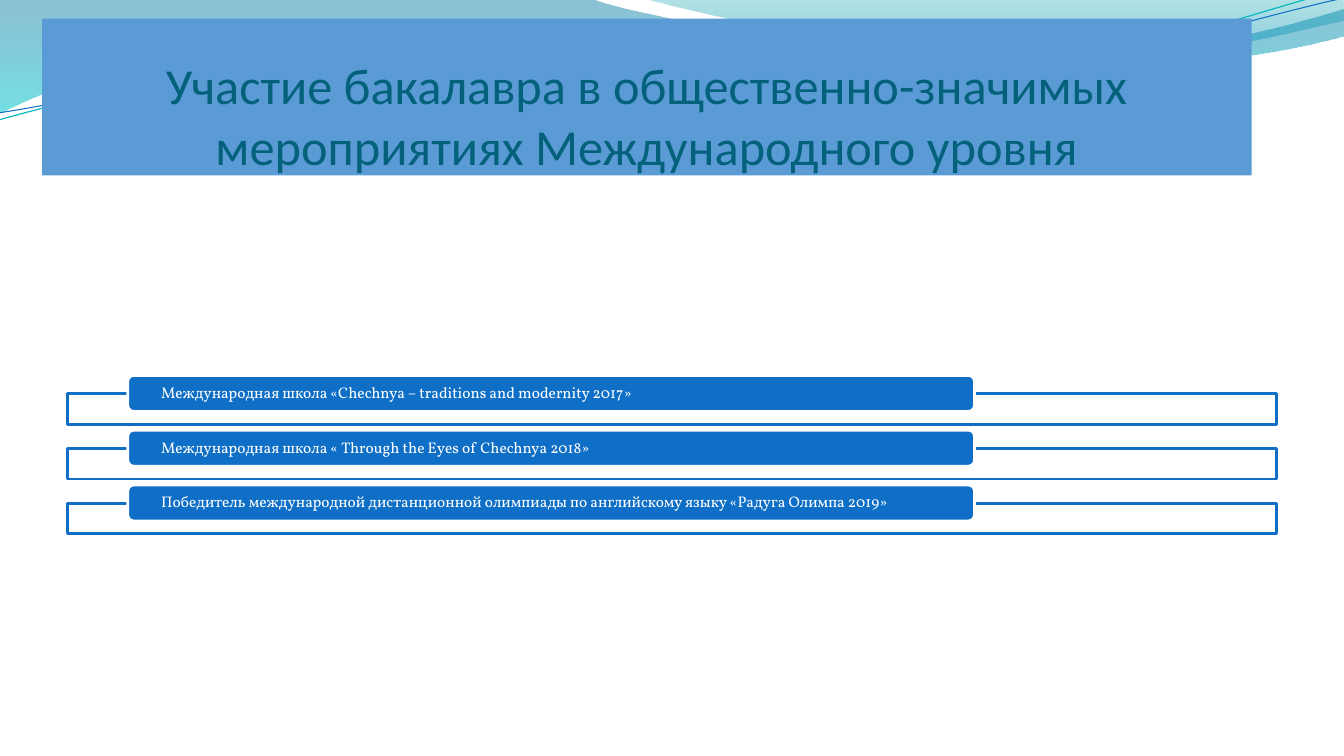
from lxml import etree
from pptx import Presentation, util as u
from pptx.dml.color import RGBColor
from pptx.enum import shapes, text
from pptx.oxml.ns import qn

TITLE = "Участие бакалавра в общественно-значимых мероприятиях Международного уровня"
EVENTS = [
    "Международная школа «Chechnya – traditions and modernity 2017»",
    "Международная школа « Through the Eyes of Chechnya 2018»",
    "Победитель международной дистанционной олимпиады по английскому языку «Радуга Олимпа 2019»",
]
COLORS = {
    "blue": "0F6FC6", "aqua": "0AB8BF", "band": "5B9BD5", "dark": "04617B",
    "white": "FFFFFF", "sea": "0074A1", "cyan": "00C6CF", "teal": "00A1A9", "sky": "008BBF",
}
# Each wave is a list of points in cm: one point is a line end, three are a Bezier curve.
# Gradient stops: position, colour, opacity in percent.
BANDS = [
    ([[(0, -.03)], [(14.9, -.03)],
      [(16.1, .43), (22.48, 1.6), (25.68, 1.6)], [(28.9, 1.6), (32.46, .66), (33.87, .23)],
      [(33.91, .91)],
      [(33.3, 1.12), (29.46, 1.93), (25.25, 1.9)], [(21.06, 1.9), (12.93, .71), (8.71, .86)],
      [(4.37, .89), (1.55, 2.11), (-.03, 2.87)]],
     [(0, "sea", 45), (1, "cyan", 55)]),
    ([[(16.23, -.03)],
      [(17.25, .28), (23.09, 1.57), (26.04, 1.65)], [(28.98, 1.75), (32.56, .81), (33.87, .53)],
      [(33.87, 0)]],
     [(0, "teal", 30), (.8, "sky", 45)]),
]
LINES = [
    ([[(-.08, 2.22)], [(1.6, 1.84), (5.37, 1.03), (9.38, 1.04)],
      [(13.4, 1.05), (20.03, 2.36), (24.1, 2.27)], [(28.17, 2.18), (31.84, .91), (33.87, .55)]],
     "aqua", .85),
    ([[(-.05, 2.04)], [(1.56, 1.89), (5.54, 1.14), (9.61, 1.18)],
      [(13.65, 1.19), (20.19, 2.24), (24.23, 2.17)], [(28.31, 2.11), (31.92, 1.06), (33.94, .75)]],
     "blue", .75),
]
TILT = -2.7
FRAME = (1.7, 9.92, 30.48, .77)
BAR = (3.22, 9.46, 21.34, .91)
PITCH = 1.38


def rgb(name):
    return RGBColor.from_string(COLORS[name])


def fade(color, percent):
    """Set the opacity of a colour element."""
    etree.SubElement(color, qn("a:alpha")).set("val", str(percent * 1000))


def wave(segments, close):
    """Draw all points as an outline, then join each group of three into a curve."""
    first, *rest = [(u.Cm(x), u.Cm(y)) for seg in segments for x, y in seg]
    pen = slide.shapes.build_freeform(*first)
    pen.add_line_segments(rest, close=close)
    shape = pen.convert_to_shape()
    shape.shadow.inherit = False
    ends = iter(shape._element.findall(f".//{qn('a:lnTo')}"))
    for seg in segments[1:]:
        group = [next(ends) for _ in seg]
        if len(group) == 3:
            curve = etree.Element(qn("a:cubicBezTo"))
            group[0].addprevious(curve)
            for end in group:
                curve.append(end[0])
                end.getparent().remove(end)
    return shape


def box(kind, place, fill, line):
    shape = slide.shapes.add_shape(kind, *map(u.Cm, place))
    shape.shadow.inherit = False
    shape.fill.solid()
    shape.fill.fore_color.rgb = rgb(fill)
    shape.line.color.rgb = rgb(line)
    shape.line.width = u.Pt(2)
    return shape


def write(shape, words, *, font, size, color, align, anchor, margins, spacing=1):
    frame = shape.text_frame
    frame.text = words
    frame.word_wrap = True
    frame.auto_size = text.MSO_AUTO_SIZE.NONE
    frame.vertical_anchor = anchor
    (frame.margin_left, frame.margin_top,
     frame.margin_right, frame.margin_bottom) = map(u.Cm, margins)
    para = frame.paragraphs[0]
    para.alignment = align
    para.line_spacing = spacing
    face = para.runs[0].font
    face.name, face.size, face.color.rgb = font, u.Pt(size), rgb(color)


prs = Presentation()
prs.slide_width, prs.slide_height = u.Cm(33.87), u.Cm(19.05)
slide = prs.slides.add_slide(prs.slide_layouts[5])

for segments, stops in BANDS:
    band = wave(segments, True)
    band.line.fill.background()
    band.fill.gradient()
    band.fill.gradient_angle = 270
    for stop, (place, name, percent) in zip(band.fill.gradient_stops, stops):
        stop.position = place
        stop.color.rgb = rgb(name)
    for (place, name, percent), color in zip(stops, band._element.spPr.iter(qn("a:srgbClr"))):
        fade(color, percent)

for segments, name, width in LINES:
    curve = wave(segments, False)
    curve.rotation = TILT
    curve.fill.background()
    curve.line.color.rgb = rgb(name)
    curve.line.width = u.Pt(width)

title = slide.shapes.title
slide.shapes._spTree.append(title._element)  # in front of the waves
title.left, title.top, title.width, title.height = map(u.Cm, (1.06, .47, 30.48, 3.95))
title.fill.solid()
title.fill.fore_color.rgb = rgb("band")
write(title, TITLE, font="Calibri", size=36, color="dark", align=text.PP_ALIGN.CENTER,
      anchor=text.MSO_ANCHOR.BOTTOM, margins=(0, .13, 0, 0))

for row, event in enumerate(EVENTS):
    left, top, width, height = FRAME
    frame = box(shapes.MSO_SHAPE.RECTANGLE, (left, top + row * PITCH, width, height), "white", "blue")
    fade(frame._element.spPr.find(f"{qn('a:solidFill')}/{qn('a:srgbClr')}"), 90)
    left, top, width, height = BAR
    bar = box(shapes.MSO_SHAPE.ROUNDED_RECTANGLE, (left, top + row * PITCH, width, height),
              "blue", "white")
    write(bar, event, font="Vollkorn", size=11, color="white", align=text.PP_ALIGN.LEFT,
          anchor=text.MSO_ANCHOR.MIDDLE, margins=(.8, 0, .8, 0), spacing=.9)

prs.save("out.pptx")
